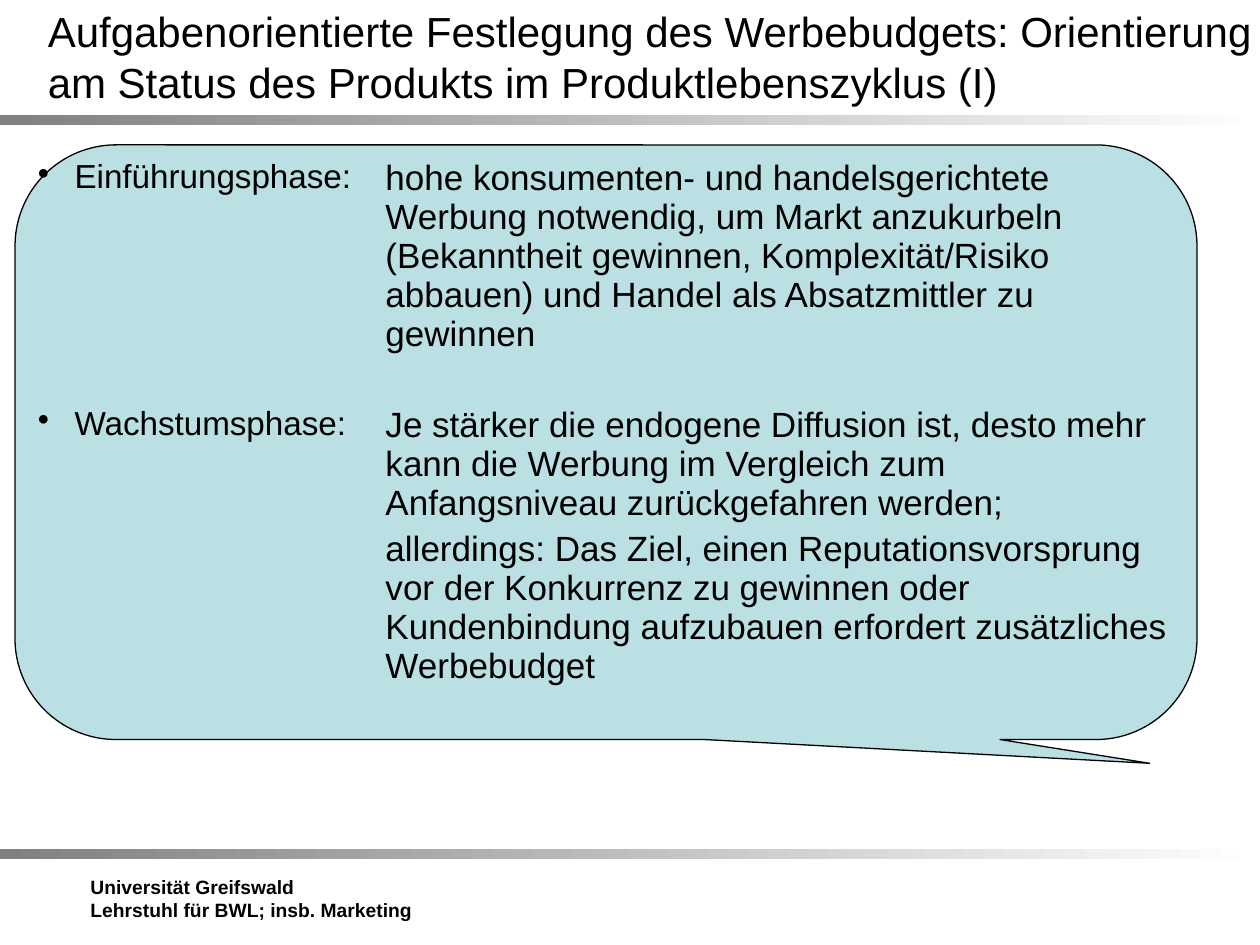
import pptx
import pptx.chart.data
import pptx.dml.color
import pptx.enum.shapes
import pptx.enum.text
import pptx.oxml.ns
import pptx.util
from lxml import etree

Pt = pptx.util.Pt
RGB = pptx.dml.color.RGBColor.from_string
qn = pptx.oxml.ns.qn
SHAPES = pptx.enum.shapes.MSO_SHAPE
ANCHOR = pptx.enum.text.MSO_ANCHOR

TITLE = ("Aufgabenorientierte Festlegung des Werbebudgets: Orientierung "
         "am Status des Produkts im Produktlebenszyklus (I)")
FOOTER = ["Universität Greifswald", "Lehrstuhl für BWL; insb. Marketing"]
PHASES = [
    ("Einführungsphase:", [
        "hohe konsumenten- und handelsgerichtete Werbung notwendig, um Markt "
        "anzukurbeln (Bekanntheit gewinnen, Komplexität/Risiko abbauen) und "
        "Handel als Absatzmittler zu gewinnen"]),
    ("Wachstumsphase:", [
        "Je stärker die endogene Diffusion ist, desto mehr kann die Werbung im "
        "Vergleich zum Anfangsniveau zurückgefahren werden;",
        "allerdings: Das Ziel, einen Reputationsvorsprung vor der Konkurrenz zu "
        "gewinnen oder Kundenbindung aufzubauen erfordert zusätzliches Werbebudget"]),
]

THEME = {
    "font": "Arial", "text": "000000", "callout": "BBE0E3", "line": "000000",
    "bar": ("808080", "FFFFFF"),
    "title": 24, "phase": 19, "body": 20, "footer": 11,
}
NO_STYLE = "{2D5ABB26-0587-4C30-8999-92F81FD0307C}"
SLIDE = (720, 540)
BAR_TOPS, BAR_HEIGHT = (65.5, 485.3), 5.8
TITLE_BOX = (20.2, 9.4, 709.2, 45.4)
FOOTER_BOX = (44.6, 496.8, 209.5, 42.5)
CALLOUT_BOX = (8.6, 82.8, 675.4, 339.8)
CALLOUT_ADJUST = (0.46, 0.54, 0.17)
TABLE_AT = (14.4, 87.1)
COLUMNS, ROWS = (198.7, 465.1), (141.1, 195.1)
BULLET_INDENT = 21


def box(values):
    return [Pt(v) for v in values]


def write(tf, lines, size, bold=False, gap=0, bullet=False):
    tf.word_wrap = True
    tf.text = "\n".join(lines)
    for i, p in enumerate(tf.paragraphs):
        if bullet:
            pPr = p._p.get_or_add_pPr()
            pPr.set("marL", str(Pt(BULLET_INDENT)))
            pPr.set("indent", str(-Pt(BULLET_INDENT)))
            etree.SubElement(pPr, qn("a:buChar")).set("char", "•")
        if gap and i:
            p.space_before = Pt(gap)
        for r in p.runs:
            r.font.name = THEME["font"]
            r.font.size = Pt(size)
            r.font.bold = bold
            r.font.color.rgb = RGB(THEME["text"])


def add_bar(s, top):
    sp = s.shapes.add_shape(SHAPES.RECTANGLE, *box((0, top, SLIDE[0], BAR_HEIGHT)))
    sp.shadow.inherit = False
    sp.line.fill.background()
    sp.fill.gradient()
    sp.fill.gradient_angle = 0
    for stop, color, position in zip(sp.fill.gradient_stops, THEME["bar"], (0, 1)):
        stop.color.rgb = RGB(color)
        stop.position = position


def add_callout(s):
    sp = s.shapes.add_shape(SHAPES.ROUNDED_RECTANGULAR_CALLOUT, *box(CALLOUT_BOX))
    sp.shadow.inherit = False
    for i, value in enumerate(CALLOUT_ADJUST):
        sp.adjustments[i] = value
    sp.fill.solid()
    sp.fill.fore_color.rgb = RGB(THEME["callout"])
    sp.line.color.rgb = RGB(THEME["line"])
    sp.line.width = Pt(0.75)


def add_phases(s):
    frame = s.shapes.add_table(len(ROWS), len(COLUMNS),
                               *box((*TABLE_AT, sum(COLUMNS), sum(ROWS))))
    table = frame.table
    table.first_row = table.horz_banding = False
    table._tbl.tblPr.find(qn("a:tableStyleId")).text = NO_STYLE
    for column, width in zip(table.columns, COLUMNS):
        column.width = Pt(width)
    for i, (height, (phase, advice)) in enumerate(zip(ROWS, PHASES)):
        table.rows[i].height = Pt(height)
        name, body = table.cell(i, 0), table.cell(i, 1)
        write(name.text_frame, [phase], THEME["phase"], bullet=True)
        write(body.text_frame, advice, THEME["body"], gap=4)
        for cell in (name, body):
            cell.fill.background()


def main():
    prs = pptx.Presentation()
    prs.slide_width, prs.slide_height = box(SLIDE)
    s = prs.slides.add_slide(prs.slide_layouts[6])
    for top in BAR_TOPS:
        add_bar(s, top)
    write(s.shapes.add_textbox(*box(FOOTER_BOX)).text_frame, FOOTER,
          THEME["footer"], bold=True)
    title = s.shapes.add_textbox(*box(TITLE_BOX)).text_frame
    write(title, [TITLE], THEME["title"])
    title.vertical_anchor = ANCHOR.MIDDLE
    add_callout(s)
    add_phases(s)
    prs.save("out.pptx")


if __name__ == "__main__":
    main()
